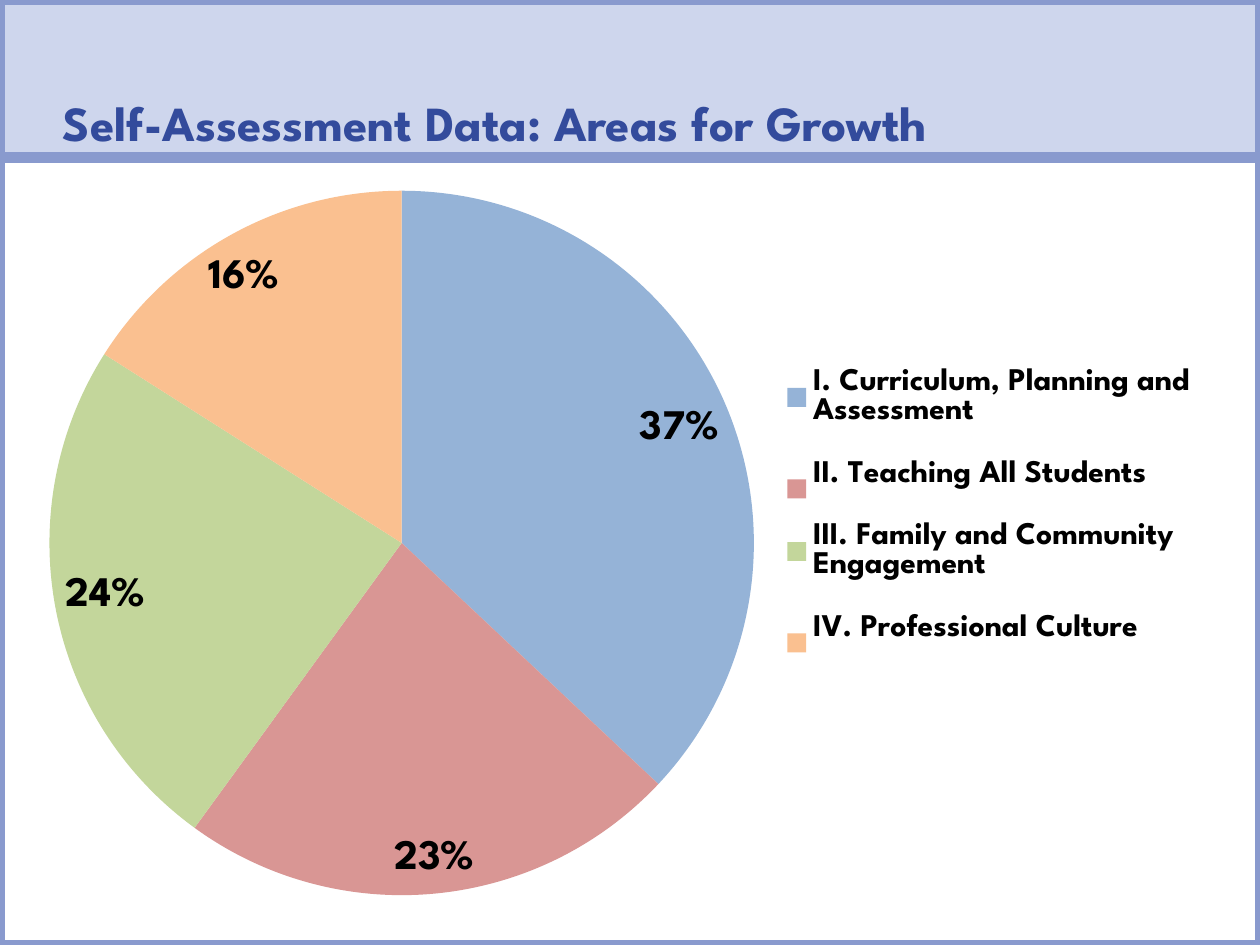
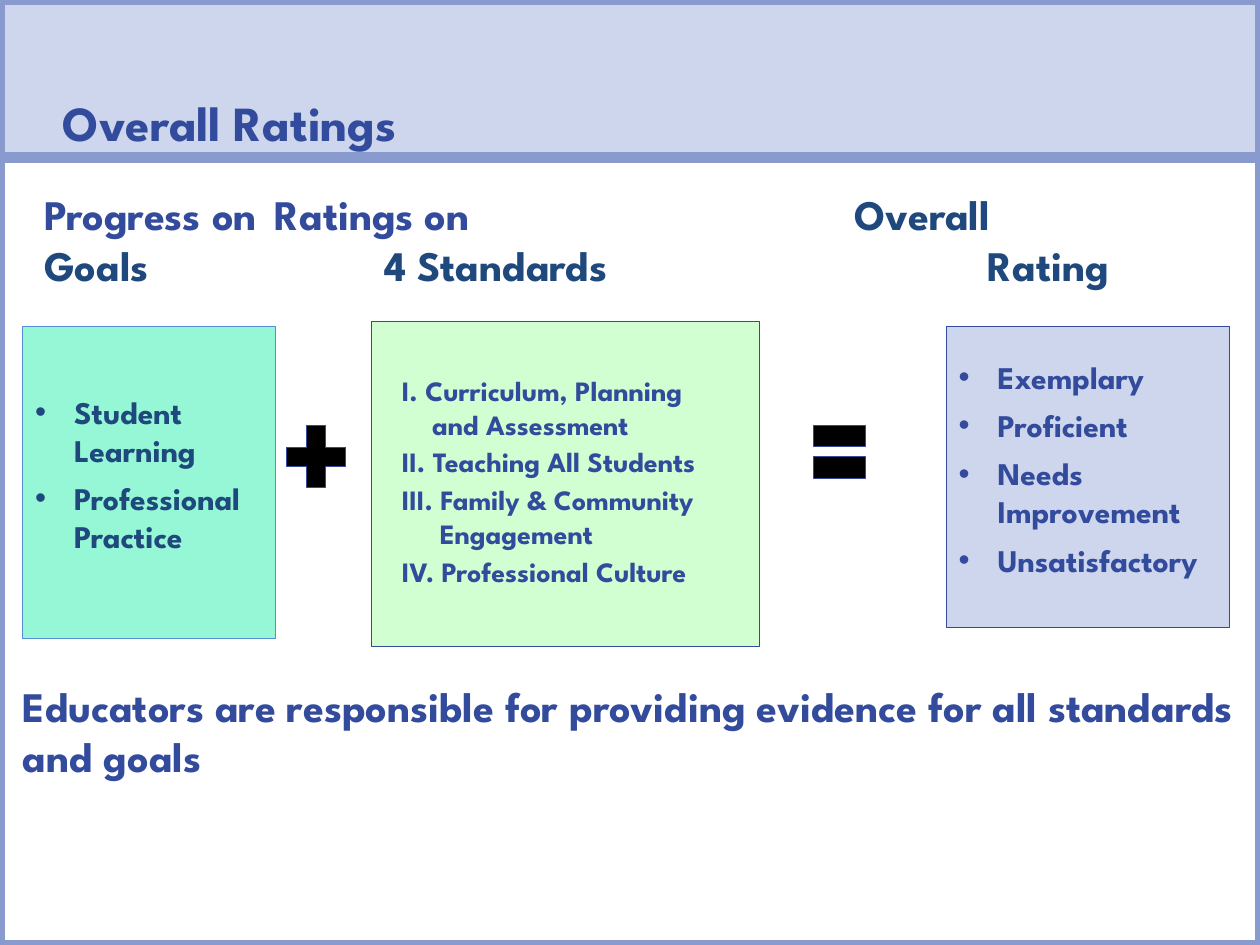
from dataclasses import dataclass
from lxml import etree
from pptx import Presentation, util as u
from pptx.chart.data import CategoryChartData
from pptx.dml.color import RGBColor
from pptx.enum import chart as charts, shapes, text
from pptx.oxml import parse_xml
from pptx.oxml.ns import nsdecls, qn


@dataclass(frozen=True)
class Theme:
    """Colours, font and type sizes of the deck."""
    font: str = "League Spartan"
    blue: str = "334B9C"
    navy: str = "1F497D"
    frame: str = "899ACE"
    pale: str = "CED6ED"
    mint: str = "30F0B0"
    green: str = "CCFFCC"
    sky: str = "558ED5"
    black: str = "000000"
    slices: tuple = ("95B3D7", "D99694", "C3D69B", "FAC090")
    title: int = 28
    heading: int = 24
    bullet: int = 18
    standard: int = 16


THEME = Theme()


@dataclass(frozen=True)
class Box:
    """A region in inches, divided into grid steps of a tenth of an inch."""
    left: float
    top: float
    width: float
    height: float

    def cell(self, column, row, columns, rows):
        """Return a part given in grid steps from the corner of this box."""
        return Box(self.left + column / 10, self.top + row / 10, columns / 10, rows / 10)

    def emu(self):
        """Return the four lengths for python-pptx."""
        return [u.Inches(n) for n in (self.left, self.top, self.width, self.height)]


PAGE = Box(0, 0, 10, 7.5)
BAND = PAGE.cell(0, 0, 100, 12.5)
BODY = PAGE.cell(0, 12.5, 100, 62.5)


def colour(value):
    """Turn a hex string into a colour."""
    return RGBColor.from_string(value)


def add_block(slide, box, fill=None, line=THEME.blue, width=0.5,
              kind=shapes.MSO_SHAPE.RECTANGLE, opacity=100):
    """Add a flat preset shape."""
    shape = slide.shapes.add_shape(kind, *box.emu())
    shape.shadow.inherit = False
    shape.line.color.rgb = colour(line)
    shape.line.width = u.Pt(width)
    if fill is None:
        shape.fill.background()
        return shape
    shape.fill.solid()
    shape.fill.fore_color.rgb = colour(fill)
    if opacity < 100:
        value = shape.fill._xPr.find(".//" + qn("a:srgbClr"))
        etree.SubElement(value, qn("a:alpha")).set("val", str(opacity * 1000))
    return shape


def prepare_frame(shape, anchor=text.MSO_ANCHOR.TOP, insets=(0, 0, 0, 0)):
    """Set wrapping, anchor and left, top, right, bottom insets."""
    frame = shape.text_frame
    frame.word_wrap = True
    frame.vertical_anchor = anchor
    (frame.margin_left, frame.margin_top,
     frame.margin_right, frame.margin_bottom) = [u.Inches(n) for n in insets]
    return frame


def add_paragraph(frame, lines, size, tint, margin=0, indent=0, after=0, bullet=False):
    """Fill the next paragraph, with a line break between its lines."""
    first = frame.paragraphs[0]
    paragraph = frame.add_paragraph() if first.runs else first
    paragraph.alignment = text.PP_ALIGN.LEFT
    paragraph.space_after = u.Pt(after)
    properties = paragraph._p.get_or_add_pPr()
    properties.set("marL", str(u.Inches(margin)))
    properties.set("indent", str(u.Inches(indent)))
    if bullet:
        etree.SubElement(properties, qn("a:buFont")).set("typeface", "Arial")
        etree.SubElement(properties, qn("a:buChar")).set("char", "•")
    for number, line in enumerate(lines):
        if number:
            paragraph.add_line_break()
        run = paragraph.add_run()
        run.text = line
        run.font.name = THEME.font
        run.font.size = u.Pt(size)
        run.font.bold = True
        run.font.color.rgb = colour(tint)
    return paragraph


def add_page(presentation, title):
    """Add a blank slide with the body frame and title band."""
    slide = presentation.slides.add_slide(presentation.slide_layouts[6])
    add_block(slide, BODY, line=THEME.frame, width=6)
    band = add_block(slide, BAND, THEME.pale, THEME.frame, 6)
    frame = prepare_frame(band, text.MSO_ANCHOR.BOTTOM, (0, 0, 0.5, 0.05))
    add_paragraph(frame, [title], THEME.title, THEME.blue, 0.5).line_spacing = u.Pt(26)
    return slide


def set_layout(element, x, y, width, height, inner=False):
    """Place a chart part by shares of the chart's size."""
    for old in element.findall(qn("c:layout")):
        element.remove(old)
    values = [("layoutTarget", "inner")] if inner else []
    values += [("xMode", "edge"), ("yMode", "edge"),
               ("x", x), ("y", y), ("w", width), ("h", height)]
    parts = "".join(f'<c:{name} val="{value}"/>' for name, value in values)
    layout = parse_xml(f'<c:layout {nsdecls("c")}><c:manualLayout>{parts}'
                       '</c:manualLayout></c:layout>')
    element.insert(0 if inner else 1, layout)


def style_font(font, size):
    """Apply the chart's bold black type."""
    font.name = THEME.font
    font.size = u.Pt(size)
    font.bold = True
    font.color.rgb = colour(THEME.black)


def add_growth_pie(slide, box):
    """Add the pie of growth areas with its legend."""
    data = CategoryChartData()
    data.categories = ["I. Curriculum, Planning and Assessment", "II. Teaching All Students",
                       "III. Family and Community Engagement", "IV. Professional Culture"]
    data.add_series("Series 1", (37, 23, 24, 16))
    chart = slide.shapes.add_chart(charts.XL_CHART_TYPE.PIE, *box.emu(), data).chart
    style_font(chart.font, THEME.bullet)
    chart.has_title = False
    chart.has_legend = True
    chart.legend.position = charts.XL_LEGEND_POSITION.RIGHT
    chart.legend.include_in_layout = False
    style_font(chart.legend.font, THEME.bullet)
    plot = chart.plots[0]
    plot.vary_by_categories = True
    for index, tint in enumerate(THEME.slices):
        fill = plot.series[0].points[index].format.fill
        fill.solid()
        fill.fore_color.rgb = colour(tint)
    plot.has_data_labels = True
    labels = plot.data_labels
    labels.show_percentage = True
    labels.show_value = False
    labels.number_format = "0%"
    labels.number_format_is_linked = False
    labels.position = charts.XL_LABEL_POSITION.BEST_FIT
    style_font(labels.font, THEME.heading)
    set_layout(chart._chartSpace.chart.plotArea, 0.04, 0.02, 0.57, 0.96, inner=True)
    set_layout(chart.legend._element, 0.62, 0.22, 0.36, 0.46)


def add_heading(slide, box, lines, step=0):
    """Add a two-line heading whose second line steps in."""
    frame = prepare_frame(slide.shapes.add_textbox(*box.emu()))
    for number, (words, tint) in enumerate(lines):
        add_paragraph(frame, [words], THEME.heading, tint, step * number)


def add_bullet_panel(slide, box, items, tint, **style):
    """Add a filled panel with a bulleted list."""
    panel = add_block(slide, box, **style)
    frame = prepare_frame(panel, text.MSO_ANCHOR.MIDDLE, (0.1, 0.05, 0.1, 0.19))
    for item in items:
        add_paragraph(frame, [item], THEME.bullet, tint, 0.31, -0.31, 6, True)


def add_standards_panel(slide, box):
    """Add the panel that lists the four standards."""
    panel = add_block(slide, box, THEME.green, opacity=87)
    frame = prepare_frame(panel, text.MSO_ANCHOR.MIDDLE, (0.24, 0.05, 0.1, 0.1))
    standards = [(["I. Curriculum, Planning", "and Assessment"], 0.24),
                 (["II. Teaching All Students"], 0),
                 (["III. Family & Community", "Engagement"], 0.3),
                 (["IV. Professional Culture"], 0)]
    for lines, hang in standards:
        add_paragraph(frame, lines, THEME.standard, THEME.blue, hang, -hang, 2.4)


def add_rating_sum(slide, box):
    """Lay out goals plus standards equals overall rating."""
    add_heading(slide, box.cell(3.5, 2.5, 18, 8),
                [("Progress on", THEME.blue), ("Goals", THEME.navy)])
    add_heading(slide, box.cell(21.8, 2.5, 32, 8),
                [("Ratings on", THEME.blue), ("4 Standards", THEME.navy)], 0.87)
    add_heading(slide, box.cell(67.8, 2.5, 26, 8),
                [("Overall", THEME.navy), ("Rating", THEME.navy)], 1.06)
    signs = [(shapes.MSO_SHAPE.MATH_PLUS, box.cell(21.9, 20.4, 6.4, 6.7)),
             (shapes.MSO_SHAPE.MATH_EQUAL, box.cell(63.8, 19.8, 5.6, 7.1))]
    for kind, place in signs:
        add_block(slide, place, THEME.black, kind=kind)
    add_standards_panel(slide, box.cell(29.5, 13, 30.8, 25.8))
    add_bullet_panel(slide, box.cell(75.1, 13.4, 22.5, 23.9),
                     ["Exemplary", "Proficient", "Needs Improvement", "Unsatisfactory"],
                     THEME.blue, fill=THEME.pale)
    add_bullet_panel(slide, box.cell(1.8, 13.4, 20.1, 24.8),
                     ["Student Learning", "Professional Practice"],
                     THEME.navy, fill=THEME.mint, line=THEME.sky, opacity=51)
    conclusion = slide.shapes.add_textbox(*box.cell(1.8, 41.5, 97, 8).emu())
    add_paragraph(prepare_frame(conclusion),
                  ["Educators are responsible for providing evidence for all standards and goals"],
                  THEME.heading, THEME.blue)


def main():
    """Build and save the deck."""
    presentation = Presentation()
    presentation.slide_width = u.Inches(PAGE.width)
    presentation.slide_height = u.Inches(PAGE.height)
    growth = add_page(presentation, "Self-Assessment Data: Areas for Growth")
    add_growth_pie(growth, BODY.cell(0, 1.1, 98.1, 59))
    ratings = add_page(presentation, "Overall Ratings")
    add_rating_sum(ratings, BODY)
    presentation.save("out.pptx")


if __name__ == "__main__":
    main()
